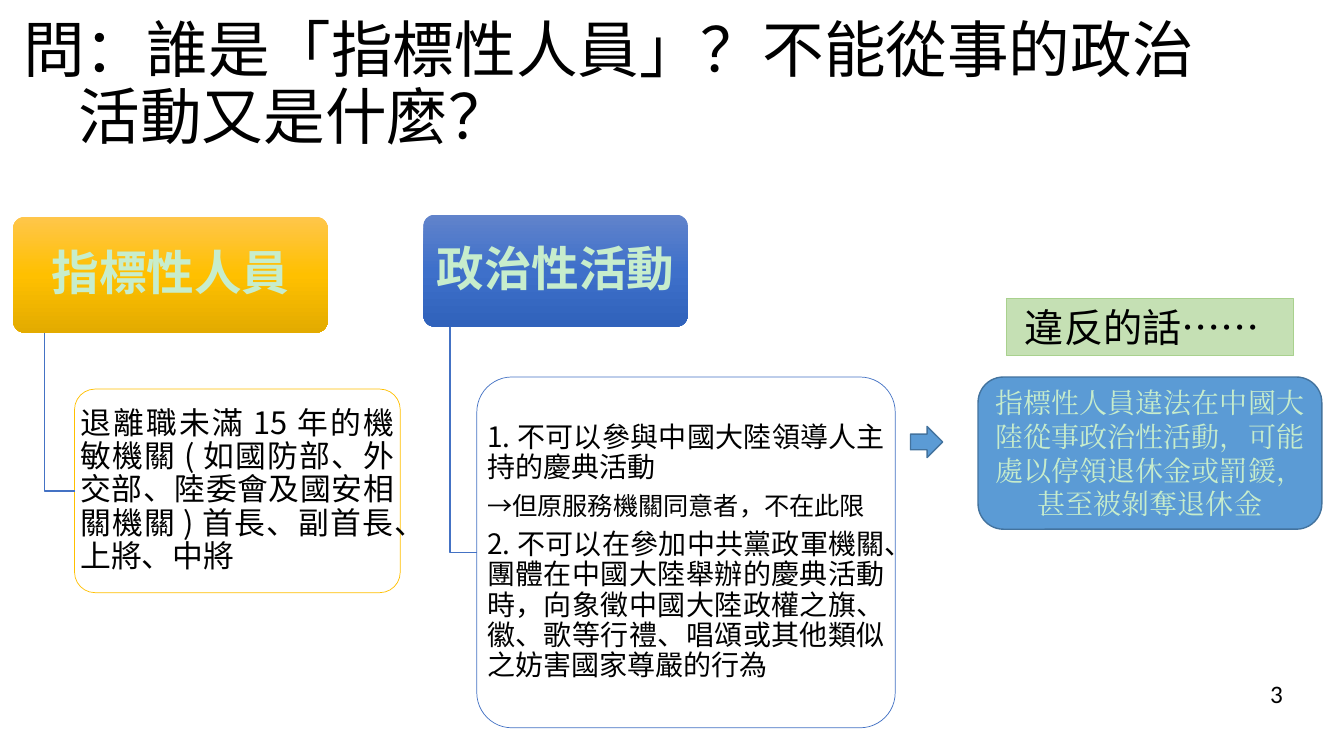
from lxml import etree
from pptx import Presentation, util as u
from pptx.dml.color import RGBColor
from pptx.enum import shapes, text
from pptx.oxml import parse_xml
from pptx.oxml.ns import nsdecls, qn

rgb = RGBColor.from_string
MSO, ALIGN, ANCHOR = shapes.MSO_SHAPE, text.PP_ALIGN, text.MSO_ANCHOR
SANS, MINT, BLACK, WHITE = "Noto Sans CJK SC", "C7EDCC", "000000", "FFFFFF"

prs = Presentation()
prs.slide_width, prs.slide_height = u.Inches(13.33), u.Inches(7.5)
s = prs.slides.add_slide(prs.slide_layouts[5])
s.background.fill.solid()
s.background.fill.fore_color.rgb = rgb(WHITE)


def add_box(kind, share, fill, line=None, width=1):
    """Add a shape placed in percent of the slide's width and height."""
    sides = (prs.slide_width, prs.slide_height) * 2
    place = [round(side * part / 100) for side, part in zip(sides, share)]
    sp = s.shapes.add_shape(kind, *place)
    sp.shadow.inherit = False
    sp.fill.solid()
    sp.fill.fore_color.rgb = rgb(fill)
    if line:
        sp.line.color.rgb = rgb(line)
        sp.line.width = u.Pt(width)
    else:
        sp.line.fill.background()
    return sp


def write(sp, lines, color=BLACK, font=SANS, bold=False, frame=None, para=None):
    """Write (text, size) lines with frame and paragraph formats."""
    tf = sp.text_frame
    for name, value in {"word_wrap": True, **(frame or {})}.items():
        setattr(tf, name, value)
    for i, (words, size) in enumerate(lines):
        p = tf.add_paragraph() if i else tf.paragraphs[0]
        p.text = words
        for name, value in (para or {}).items():
            setattr(p, name, value)
        for r in p.runs:
            look = {"size": u.Pt(size), "name": font, "bold": bold}
            for name, value in look.items():
                setattr(r.font, name, value)
            r.font.color.rgb = rgb(color)
            latin = r.font._element.find(qn("a:latin"))
            latin.addnext(etree.Element(qn("a:ea"), typeface=font))


# Title with a hanging indent
title = s.shapes.title
title.left, title.top = u.Inches(0.13), u.Inches(0.13)
title.width, title.height = u.Inches(12.92), u.Inches(1.45)
write(title, [("問：誰是「指標性人員」？不能從事的政治\v活動又是什麼？", 44)],
      frame={"auto_size": text.MSO_AUTO_SIZE.NONE, "vertical_anchor": ANCHOR.MIDDLE},
      para={"alignment": ALIGN.LEFT, "line_spacing": 0.9})
pPr = title.text_frame.paragraphs[0]._p.get_or_add_pPr()
pPr.set("marL", str(u.Inches(0.55)))
pPr.set("indent", str(-u.Inches(0.55)))

# Two branches: gradient heading, elbow line, outlined body
branches = [
    ("指標性人員", (0.98, 28.67, 23.4, 15.33), ("FFC64B", "FFC000", "E3AB00"),
     (5.55, 51.47, 24.23, 26.93), "FFC000",
     [("退離職未滿15年的機敏機關(如國防部、外交部、陸委會及國安相關機關)首長、副首長、上將、中將", 22)]),
    ("政治性活動", (31.51, 28.4, 19.65, 14.8), ("6183CB", "3E70CA", "3062BB"),
     (35.48, 49.87, 31.13, 46.4), "4472C4",
     [("1.不可以參與中國大陸領導人主持的慶典活動", 20),
      ("→但原服務機關同意者，不在此限", 18),
      ("2.不可以在參加中共黨政軍機關、團體在中國大陸舉辦的慶典活動時，向象徵中國大陸"
       "政權之旗、徽、歌等行禮、唱頌或其他類似之妨害國家尊嚴的行為", 20)]),
]
for heading, head_share, colors, body_share, outline, lines in branches:
    head = add_box(MSO.ROUNDED_RECTANGLE, head_share, colors[1])
    stops = "".join(f'<a:gs pos="{i * 50000}"><a:srgbClr val="{c}"/></a:gs>'
                    for i, c in enumerate(colors))
    solid = head._element.spPr.find(qn("a:solidFill"))
    solid.getparent().replace(solid, parse_xml(
        f'<a:gradFill {nsdecls("a")} rotWithShape="1"><a:gsLst>{stops}</a:gsLst>'
        '<a:lin ang="5400000" scaled="0"/></a:gradFill>'))
    body = add_box(MSO.ROUNDED_RECTANGLE, body_share, WHITE, outline, 0.5)
    head.adjustments[0] = body.adjustments[0] = 0.1

    spacing = {"line_spacing": 0.9, "space_after": u.Pt(7)}
    write(head, [(heading, 34)], MINT, bold=True,
          frame={"vertical_anchor": ANCHOR.MIDDLE, "margin_left": u.Inches(0.05),
                 "margin_right": u.Inches(0.05)},
          para={"alignment": ALIGN.CENTER, "line_spacing": 0.9})
    write(body, lines,
          frame={"vertical_anchor": ANCHOR.MIDDLE, "margin_left": 0, "margin_right": 0,
                 "margin_top": 0, "margin_bottom": 0},
          para={"alignment": ALIGN.JUSTIFY, **spacing})

    x, y = head.left + head.width // 10, body.top + body.height // 2
    path = s.shapes.build_freeform(x, head.top + head.height)
    path.add_line_segments([(x, y), (body.left, y)], close=False)
    elbow = path.convert_to_shape()
    elbow.shadow.inherit = False
    elbow.fill.background()
    elbow.line.color.rgb = rgb("4472C4")
    elbow.line.width = u.Pt(1)

# Arrow to the consequence
add_box(MSO.RIGHT_ARROW, (67.74, 56.4, 2.4, 4.13), "5B9BD5", "43739E")
label = add_box(MSO.RECTANGLE, (74.87, 39.47, 21.38, 7.6), "C5E0B4", "A9D18E", 0.75)
write(label, [(" 違反的話……", 28)], frame={"vertical_anchor": ANCHOR.TOP},
      para={"alignment": ALIGN.JUSTIFY})
penalty = add_box(MSO.ROUNDED_RECTANGLE, (72.77, 49.87, 25.58, 20.13), "5B9BD5", "43739E")
write(penalty, [("指標性人員違法在中國大陸從事政治性活動，可能處以停領退休金或罰鍰，甚至被剝奪退休金", 20)],
      MINT, "Times New Roman", frame={"vertical_anchor": ANCHOR.MIDDLE},
      para={"alignment": ALIGN.CENTER})

# Page number
number = s.shapes.add_textbox(u.Inches(12.5), u.Inches(6.68), u.Inches(0.33), u.Inches(0.4))
write(number, [("3", 18)], font="Calibri", frame={"word_wrap": False})

prs.save("out.pptx")
